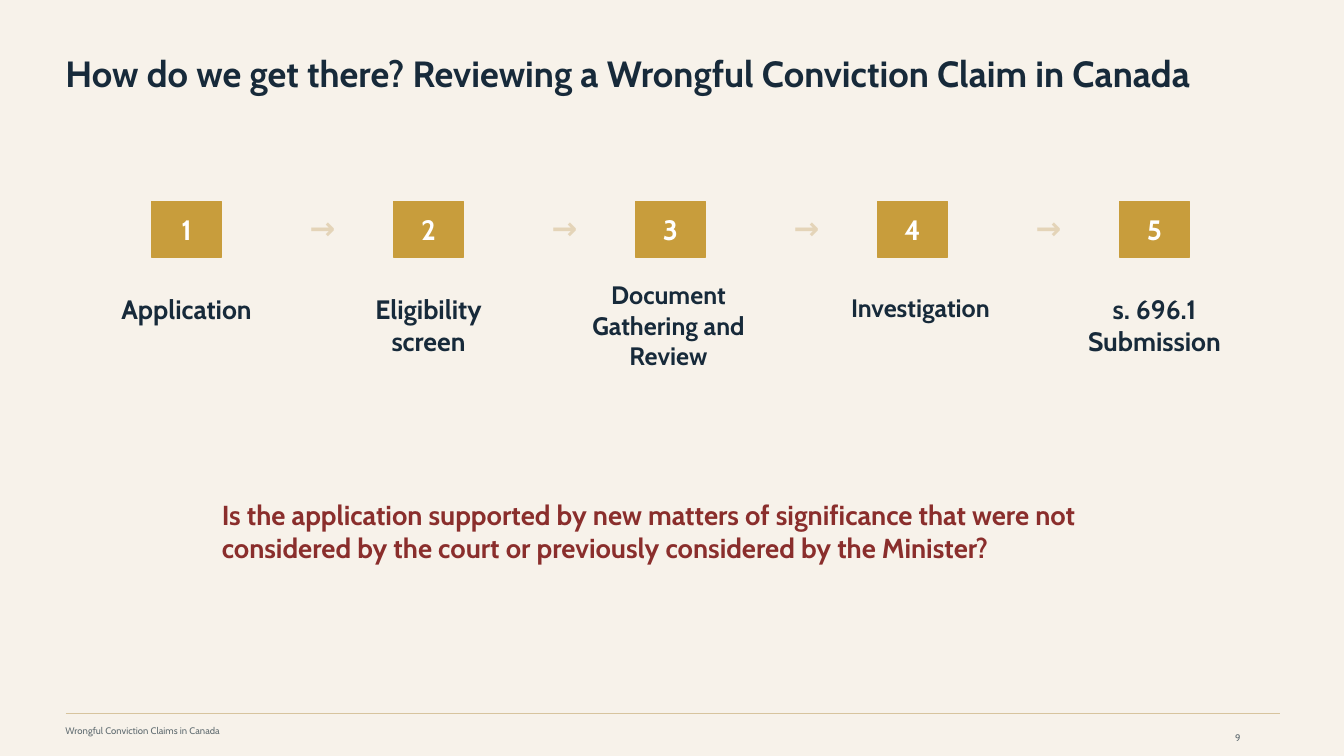
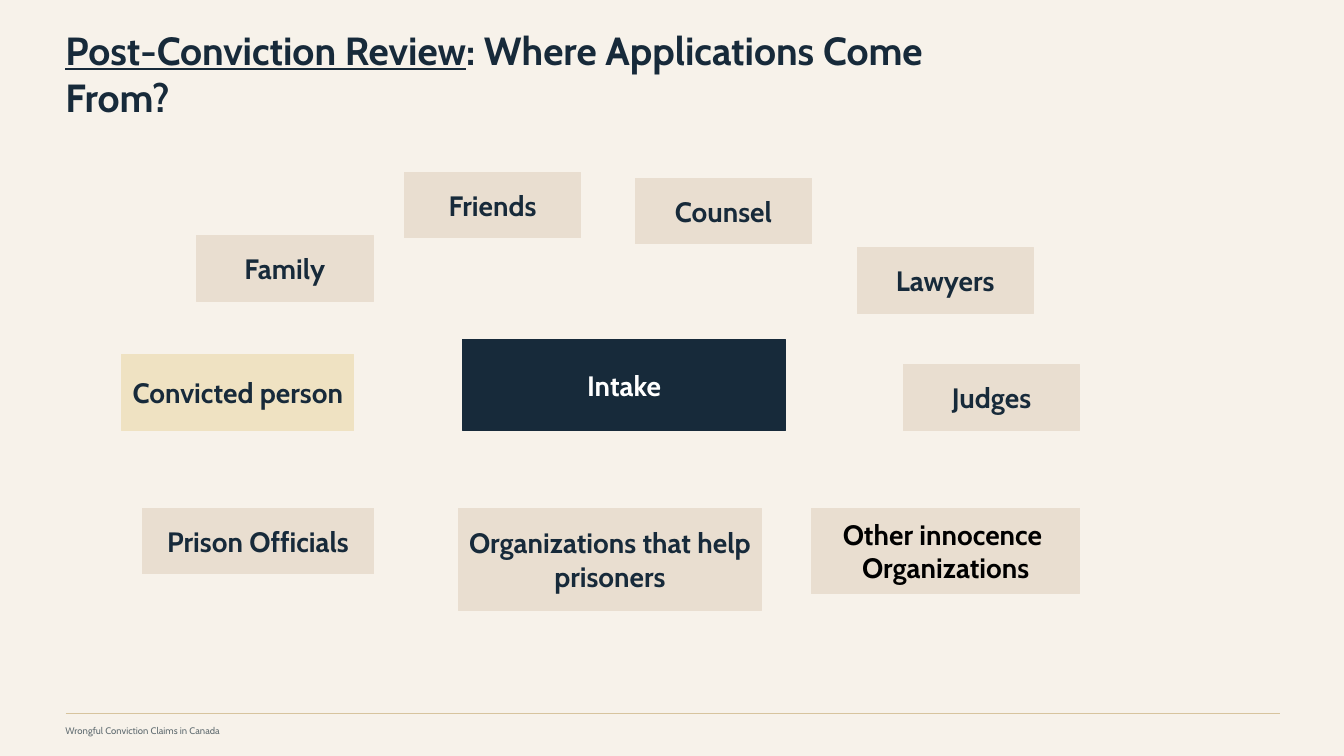
from lxml.etree import SubElement
from pptx import Presentation
from pptx.dml.color import RGBColor
from pptx.enum.shapes import MSO_CONNECTOR, MSO_SHAPE
from pptx.enum.text import MSO_ANCHOR, PP_ALIGN
from pptx.oxml.ns import qn
from pptx.util import Inches, Pt

CREAM = RGBColor(0xF7, 0xF2, 0xEA)
NAVY = RGBColor(0x17, 0x2A, 0x3A)
GOLD = RGBColor(0xC8, 0x9D, 0x3C)
PALE_GOLD = RGBColor(0xEF, 0xE2, 0xC2)
SAND = RGBColor(0xE9, 0xDE, 0xD0)
ARROW_SAND = RGBColor(0xE4, 0xD4, 0xB8)
RULE_TAN = RGBColor(0xD7, 0xC4, 0x9E)
RED = RGBColor(0x8A, 0x2E, 0x2C)
GREY = RGBColor(0x5F, 0x6B, 0x70)
WHITE = RGBColor(0xFF, 0xFF, 0xFF)
BLACK = RGBColor(0, 0, 0)

FONT = "Cabin"
MARGIN = 0.65
FRAME_FORMAT = {
    "word_wrap": True,
    "vertical_anchor": MSO_ANCHOR.MIDDLE,
    "margin_left": 0,
    "margin_top": 0,
    "margin_right": 0,
    "margin_bottom": 0,
}


def set_all(target, values):
    for key, value in values.items():
        setattr(target, key, value)


def write(frame, text, size, color, bold=True, align=PP_ALIGN.CENTER):
    set_all(frame, FRAME_FORMAT)
    frame.text = text
    font_format = {"name": FONT, "size": Pt(size), "bold": bold}
    for paragraph in frame.paragraphs:
        paragraph.alignment = align
        for run in paragraph.runs:
            set_all(run.font, font_format)
            run.font.color.rgb = color


def add_text(slide, box, text, size, color, **style):
    frame = slide.shapes.add_textbox(*map(Inches, box)).text_frame
    write(frame, text, size, color, **style)
    return frame


def add_block(slide, box, text, fill, color=NAVY):
    block = slide.shapes.add_shape(MSO_SHAPE.RECTANGLE, *map(Inches, box))
    block.shadow.inherit = False
    block.fill.solid()
    block.fill.fore_color.rgb = fill
    block.line.color.rgb = fill
    block.line.width = Pt(0.75)
    write(block.text_frame, text, 20, color)


def add_footer(slide, left, top, width):
    rule = slide.shapes.add_connector(
        MSO_CONNECTOR.STRAIGHT,
        *map(Inches, (left, top, left + width, top)))
    rule.line.color.rgb = RULE_TAN
    rule.line.width = Pt(1)
    SubElement(rule._element.spPr, qn("a:effectLst"))
    add_text(slide, (left, top + 0.07, 5.8, 0.2), "Wrongful Conviction Claims in Canada",
             6.8, GREY, bold=False, align=PP_ALIGN.LEFT)


def add_base_slide(deck, title, size, width):
    slide = deck.slides.add_slide(deck.slide_layouts[6])
    slide.background.fill.solid()
    slide.background.fill.fore_color.rgb = CREAM
    add_footer(slide, MARGIN, 7.08, 12.05)
    frame = add_text(slide, (MARGIN, 0.45, width, 0.55), title, size, NAVY,
                     align=PP_ALIGN.LEFT)
    return slide, frame.paragraphs[0]


def add_steps(slide, left, top, pitch):
    steps = [
        ("Application", 19, 0, 2, 0.43),
        ("Eligibility\nscreen", 19, 0, 2, 0.75),
        ("Document Gathering and Review", 18, 0, 1.96, 0.75),
        ("Investigation", 18, 0.2, 1.76, 0.4),
        ("s. 696.1 Submission", 19, 0, 2, 0.75),
    ]
    for index, (label, size, indent, width, height) in enumerate(steps):
        x = left + index * pitch
        add_block(slide, (x + 0.65, top, 0.7, 0.55), str(index + 1), GOLD, WHITE)
        add_text(slide, (x + indent, top + 0.85, width, height), label, size, NAVY)
        if index:
            add_text(slide, (x - 0.3, top + 0.08, 0.5, 0.35), "→", 22, ARROW_SAND)


def build_review_slide(deck):
    slide, _ = add_base_slide(
        deck, "How do we get there? Reviewing a Wrongful Conviction Claim in Canada",
        26, 11.8)
    add_steps(slide, 0.85, 2, 2.4)
    add_text(slide, (2.2, 4.97, 8.8, 0.6),
             "Is the application supported by new matters of significance that were not "
             "considered by the court or previously considered by the Minister?",
             19.6, RED, align=PP_ALIGN.LEFT)
    add_text(slide, (12.25, 7.15, 0.67, 0.33), "9", 6.8, GREY,
             bold=False, align=PP_ALIGN.LEFT)


def add_sources(slide, left, top):
    small, wide = (1.75, 0.65), (2.3, 0.65)
    sources = [
        ("Family", 0.74, 0.63, small),
        ("Friends", 2.8, 0, small),
        ("Counsel", 5.09, 0.06, small),
        ("Lawyers", 7.29, 0.75, small),
        ("Judges", 7.75, 1.91, small),
        ("Prison Officials", 0.2, 3.33, wide),
        ("Organizations that help prisoners", 3.34, 3.33, (3, 1.02)),
    ]
    for label, x, y, size in sources:
        add_block(slide, (left + x, top + y, *size), label, SAND)
    add_block(slide, (left, top + 1.81, 2.3, 0.75), "Convicted person", PALE_GOLD)
    add_block(slide, (left + 3.38, top + 1.66, 3.2, 0.9), "Intake", NAVY, WHITE)
    add_block(slide, (left + 6.84, top + 3.33, 2.66, 0.85),
              "Other innocence \vOrganizations", SAND, BLACK)


def build_sources_slide(deck):
    slide, title = add_base_slide(deck, "Post-Conviction Review", 28, 9.6)
    lead = title.runs[0]
    rest = title.add_run()
    rest.text = ": Where Applications Come From?"
    set_all(rest.font, {"name": FONT, "size": lead.font.size, "bold": True})
    rest.font.color.rgb = NAVY
    lead.font.underline = True
    add_sources(slide, 1.21, 1.71)


def main():
    deck = Presentation()
    set_all(deck, {"slide_width": Inches(13.33), "slide_height": Inches(7.5)})
    build_review_slide(deck)
    build_sources_slide(deck)
    deck.save("out.pptx")


if __name__ == "__main__":
    main()
